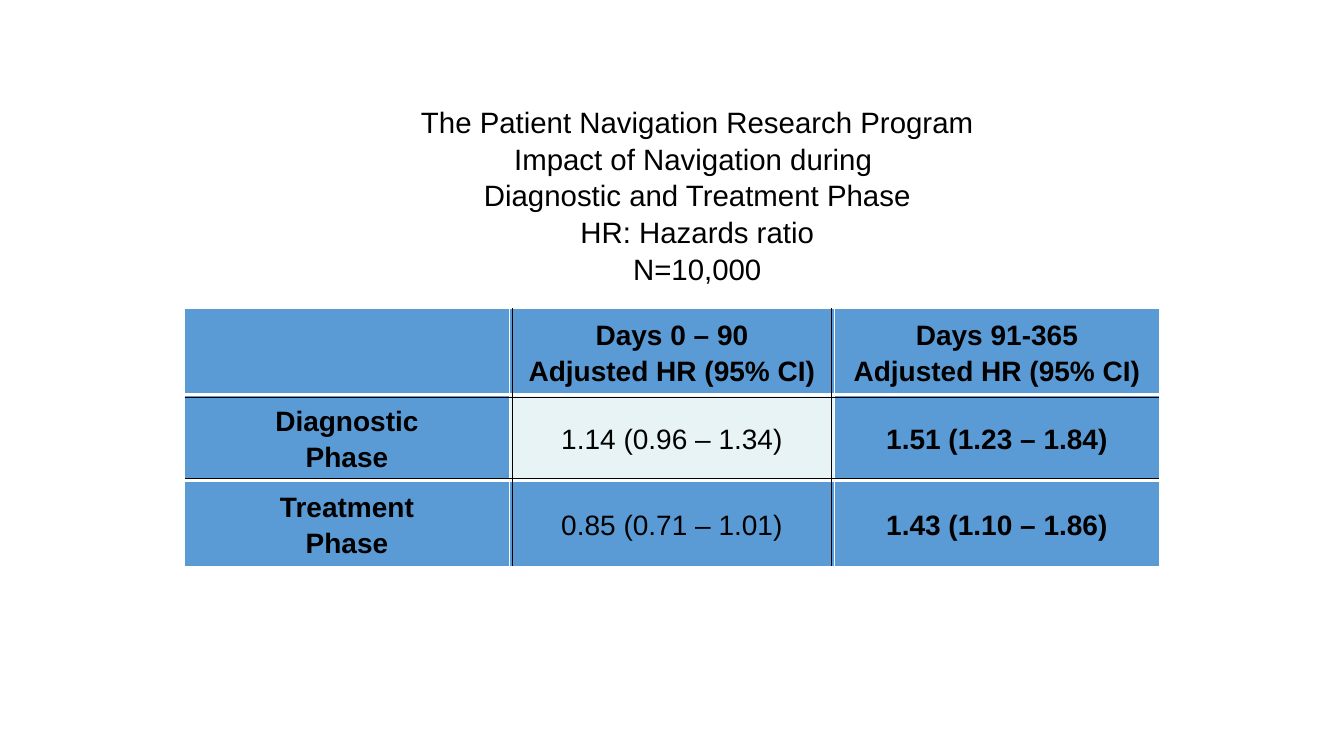
from lxml import etree
from pptx import Presentation
from pptx.dml.color import RGBColor
from pptx.enum.shapes import MSO_CONNECTOR
from pptx.enum.text import MSO_ANCHOR, MSO_AUTO_SIZE, PP_ALIGN
from pptx.oxml.ns import qn
from pptx.util import Inches, Pt

CENTER = PP_ALIGN.CENTER
MIDDLE = MSO_ANCHOR.MIDDLE
GROW = MSO_AUTO_SIZE.SHAPE_TO_FIT_TEXT
STRAIGHT = MSO_CONNECTOR.STRAIGHT

FONT = "Arial"
BLACK, WHITE, BLUE, PALE = "000000", "FFFFFF", "5B9BD5", "E7F3F4"

TITLE_LINES = [
    "The Patient Navigation Research Program",
    "Impact of Navigation during ",
    "Diagnostic and Treatment Phase",
    "HR: Hazards ratio",
    "N=10,000",
]
HAZARD_ROWS = [
    [[], ["Days 0 – 90", "Adjusted HR (95% CI)"], ["Days 91-365", "Adjusted HR (95% CI)"]],
    [["Diagnostic", "Phase"], ["1.14 (0.96 – 1.34)"], ["1.51 (1.23 – 1.84)"]],
    [["Treatment", "Phase"], ["0.85 (0.71 – 1.01)"], ["1.43 (1.10 – 1.86)"]],
]
PALE_CELL = (1, 1)
PLAIN_CELLS = {(1, 1), (2, 1)}


def color(value):
    return RGBColor.from_string(value)


def add_lines(frame, lines, size, bold=False):
    for index, line in enumerate(lines):
        para = frame.paragraphs[0] if index == 0 else frame.add_paragraph()
        para.alignment = CENTER
        span = para.add_run()
        span.text = line
        span.font.name = FONT
        span.font.size = Pt(size)
        span.font.bold = bold
        span.font.color.rgb = color(BLACK)


def build_title(page, left, top, width, height):
    title = page.shapes.title
    title.left, title.top = Inches(left), Inches(top)
    title.width, title.height = Inches(width), Inches(height)
    frame = title.text_frame
    frame.word_wrap = False
    frame.auto_size = GROW
    frame.vertical_anchor = MIDDLE
    add_lines(frame, TITLE_LINES, 21)
    for index, para in enumerate(frame.paragraphs):
        para.space_before = Pt(1 if index else 0)
        properties = para._p.get_or_add_pPr()
        properties.set("marL", "0")
        properties.set("indent", str(Inches(0.5)))


def add_borders(cell, widths):
    properties = cell._tc.get_or_add_tcPr()
    for index, (side, width) in enumerate(widths.items()):
        border = etree.Element(qn(f"a:{side}"), w=str(Pt(width)))
        fill = etree.SubElement(border, qn("a:solidFill"))
        etree.SubElement(fill, qn("a:srgbClr"), val=WHITE)
        properties.insert(index, border)


def fill_cell(cell, lines, row, column):
    cell.fill.solid()
    cell.fill.fore_color.rgb = color(PALE if (row, column) == PALE_CELL else BLUE)
    cell.vertical_anchor = MIDDLE
    cell.margin_left = cell.margin_right = Inches(0.07)
    cell.margin_top = cell.margin_bottom = 0
    add_lines(cell.text_frame, lines, 20, (row, column) not in PLAIN_CELLS)
    for para in cell.text_frame.paragraphs:
        para.line_spacing = 1.15
    last_row = len(HAZARD_ROWS) - 1
    add_borders(cell, {
        "lnL": 1,
        "lnR": 1,
        "lnT": 3 if row > 0 else 1,
        "lnB": 3 if row < last_row else 1,
    })


def build_table(page, left, top, width, height):
    row_count, column_count = len(HAZARD_ROWS), len(HAZARD_ROWS[0])
    table = page.shapes.add_table(
        row_count, column_count, Inches(left), Inches(top), Inches(width), Inches(height)
    ).table
    for row, cells in enumerate(HAZARD_ROWS):
        for column, lines in enumerate(cells):
            fill_cell(table.cell(row, column), lines, row, column)


def add_rule(page, start_x, start_y, end_x, end_y):
    rule = page.shapes.add_connector(
        STRAIGHT, Inches(start_x), Inches(start_y), Inches(end_x), Inches(end_y)
    )
    rule.line.color.rgb = color(BLACK)
    rule.line.width = Pt(0.75)
    etree.SubElement(rule._element.spPr, qn("a:effectLst"))


def build_rules(page, left, top, width, height):
    for offset in (0.88, 1.69):
        add_rule(page, left, top + offset, left + width, top + offset)
    for offset in (3.25, 6.42):
        add_rule(page, left + offset, top, left + offset, top + height)


def main():
    deck = Presentation()
    deck.slide_width, deck.slide_height = Inches(13.33), Inches(7.5)
    page = deck.slides.add_slide(deck.slide_layouts.get_by_name("Title Only"))
    table_box = (1.83, 3.06, 9.67, 2.56)
    build_title(page, 3.55, 1, 6.23, 1.87)
    build_table(page, *table_box)
    build_rules(page, *table_box)
    deck.save("out.pptx")


if __name__ == "__main__":
    main()
